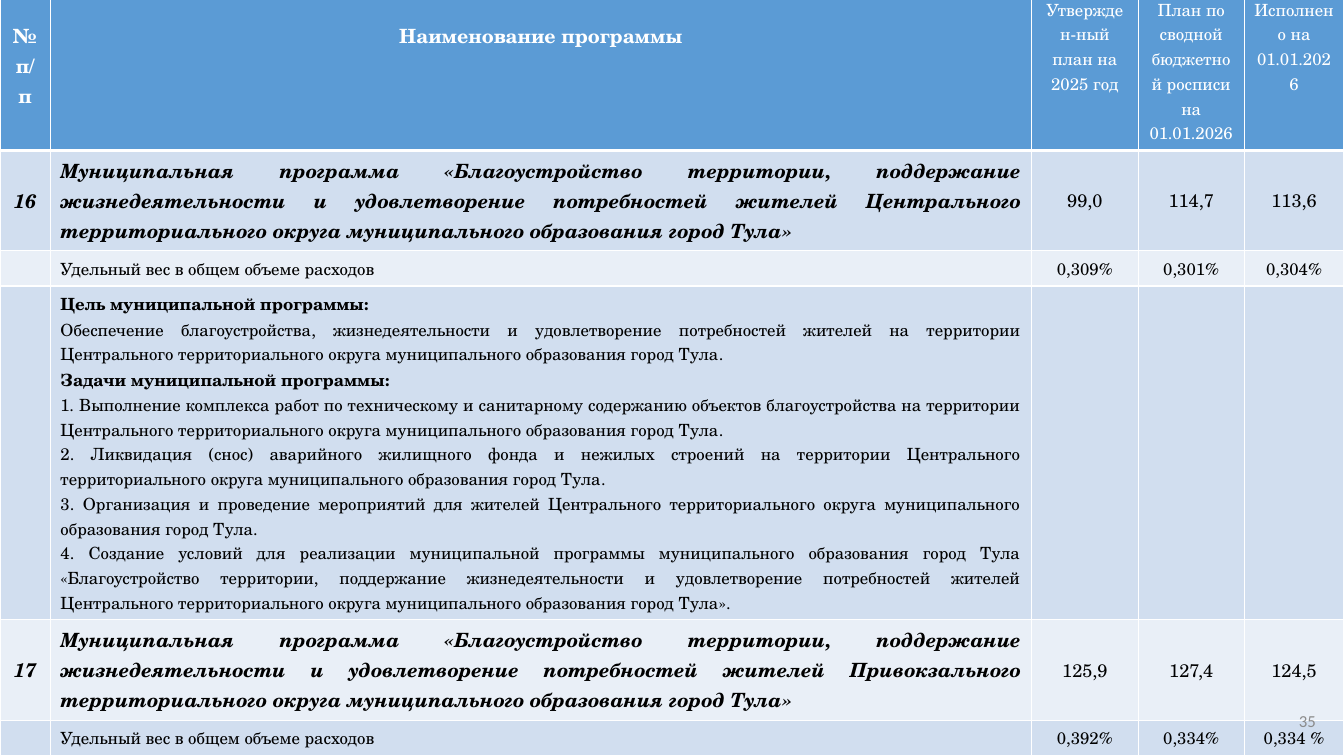
from pptx import Presentation
from pptx.dml.color import RGBColor
from pptx.enum.text import MSO_ANCHOR, PP_ALIGN
from pptx.oxml import parse_xml
from pptx.oxml.ns import nsdecls
from pptx.util import Inches, Pt

CENTER, JUSTIFY, RIGHT = PP_ALIGN.CENTER, PP_ALIGN.JUSTIFY, PP_ALIGN.RIGHT
MIDDLE, TOP = MSO_ANCHOR.MIDDLE, MSO_ANCHOR.TOP

WHITE = RGBColor(0xFF, 0xFF, 0xFF)
BLACK = RGBColor(0x00, 0x00, 0x00)
GRAY = RGBColor(0x8B, 0x8B, 0x8B)
HEADER_BLUE = RGBColor(0x5B, 0x9B, 0xD5)
BAND_DARK = RGBColor(0xD1, 0xDE, 0xEF)
BAND_LIGHT = RGBColor(0xE9, 0xEF, 0xF7)

FONT = "TeX Gyre Schola"
THIN, THICK = 0.96, 3
COLUMN_WIDTHS = [0.5, 9.73, 1.06, 1.05, 0.99]
ROW_HEIGHTS = [1.57, 0.99, 0.35, 3.31, 0.99, 0.35]

HEADINGS = [
    "№ п/п",
    "Наименование программы",
    "Утвержден-ный план на 2025 год",
    "План по сводной бюджетной росписи на 01.01.2026",
    "Исполнено на 01.01.2026",
]
SHARE = "Удельный вес в общем объеме расходов"
PROGRAM = (
    "Муниципальная программа «Благоустройство территории, поддержание "
    "жизнедеятельности и удовлетворение потребностей жителей {} "
    "территориального округа муниципального образования город Тула»"
)
GOAL_HEADING = "Цель муниципальной программы:"
TASKS_HEADING = "Задачи муниципальной программы:"
GOALS = [
    GOAL_HEADING,
    "Обеспечение благоустройства, жизнедеятельности и удовлетворение "
    "потребностей жителей на территории Центрального территориального округа "
    "муниципального образования город Тула.",
    TASKS_HEADING,
    "1. Выполнение комплекса работ по техническому и санитарному содержанию "
    "объектов благоустройства на территории Центрального территориального "
    "округа муниципального образования город Тула.",
    "2. Ликвидация (снос) аварийного жилищного фонда и нежилых строений на "
    "территории Центрального территориального округа муниципального "
    "образования город Тула.",
    "3. Организация и проведение мероприятий для жителей Центрального "
    "территориального округа муниципального образования город Тула.",
    "4. Создание условий для реализации муниципальной программы "
    "муниципального образования город Тула «Благоустройство территории, "
    "поддержание жизнедеятельности и удовлетворение потребностей жителей "
    "Центрального территориального округа муниципального образования город "
    "Тула».",
]


def write_para(para, text, size, align, color=BLACK, bold=False, italic=False,
               name=FONT):
    para.text = text
    para.alignment = align
    font = para.font
    font.name, font.size = name, Pt(size)
    font.bold, font.italic = bold, italic
    font.color.rgb = color


def style_cell(cell, fill, top=THIN, bottom=THIN, anchor=MIDDLE):
    properties = cell._tc.get_or_add_tcPr()
    for side, width in (("L", THIN), ("R", THIN), ("T", top), ("B", bottom)):
        properties.append(parse_xml(
            f'<a:ln{side} {nsdecls("a")} w="{Pt(width)}"><a:solidFill>'
            f'<a:srgbClr val="{WHITE}"/></a:solidFill></a:ln{side}>'))
    cell.fill.solid()
    cell.fill.fore_color.rgb = fill
    cell.vertical_anchor = anchor


def fill_header(cells):
    for index, (cell, heading) in enumerate(zip(cells, HEADINGS)):
        style_cell(cell, HEADER_BLUE, bottom=THICK, anchor=TOP)
        wide = index < 2
        if wide:
            cell.margin_top = Inches(0.28)
        write_para(cell.text_frame.paragraphs[0], heading, 14 if wide else 12,
                   CENTER, WHITE, bold=wide)


def fill_row(cells, fill, texts, name_size, value_size, strong=False, top=THIN):
    for index, (cell, text) in enumerate(zip(cells, texts)):
        style_cell(cell, fill, top=top)
        label = index < 2
        write_para(cell.text_frame.paragraphs[0], text,
                   name_size if label else value_size,
                   JUSTIFY if index == 1 else CENTER,
                   bold=strong and label, italic=strong and label)


def fill_goals(cells, fill):
    fill_row(cells, fill, [""] * len(cells), 12, 12)
    frame = cells[1].text_frame
    for index, text in enumerate(GOALS):
        para = frame.add_paragraph() if index else frame.paragraphs[0]
        write_para(para, text, 12, JUSTIFY,
                   bold=text in (GOAL_HEADING, TASKS_HEADING))


def add_program_table(page):
    frame = page.shapes.add_table(
        len(ROW_HEIGHTS), len(COLUMN_WIDTHS), Inches(0), Inches(-0.08),
        Inches(sum(COLUMN_WIDTHS)), Inches(sum(ROW_HEIGHTS)))
    table = frame.table
    for column, width in zip(table.columns, COLUMN_WIDTHS):
        column.width = Inches(width)
    for row, height in zip(table.rows, ROW_HEIGHTS):
        row.height = Inches(height)
    rows = [list(row.cells) for row in table.rows]
    fill_header(rows[0])
    fill_row(rows[1], BAND_DARK,
             ["16", PROGRAM.format("Центрального"), "99,0", "114,7", "113,6"],
             14, 13, strong=True, top=THICK)
    fill_row(rows[2], BAND_LIGHT, ["", SHARE, "0,309%", "0,301%", "0,304%"],
             12, 12)
    fill_goals(rows[3], BAND_DARK)
    fill_row(rows[4], BAND_LIGHT,
             ["17", PROGRAM.format("Привокзального"), "125,9", "127,4", "124,5"],
             14, 13, strong=True)
    fill_row(rows[5], BAND_DARK, ["", SHARE, "0,392%", "0,334%", "0,334 %"],
             12, 12)


def add_page_number(page, number):
    box = page.shapes.add_textbox(
        Inches(9.42), Inches(6.95), Inches(3.73), Inches(0.4))
    box.text_frame.word_wrap = True
    box.text_frame.vertical_anchor = MIDDLE
    write_para(box.text_frame.paragraphs[0], number, 12, RIGHT, GRAY,
               name="Calibri")


def main():
    deck = Presentation()
    deck.slide_width, deck.slide_height = Inches(13.33), Inches(7.5)
    page = deck.slides.add_slide(deck.slide_layouts[6])
    add_program_table(page)
    add_page_number(page, "35")
    deck.save("out.pptx")


if __name__ == "__main__":
    main()
